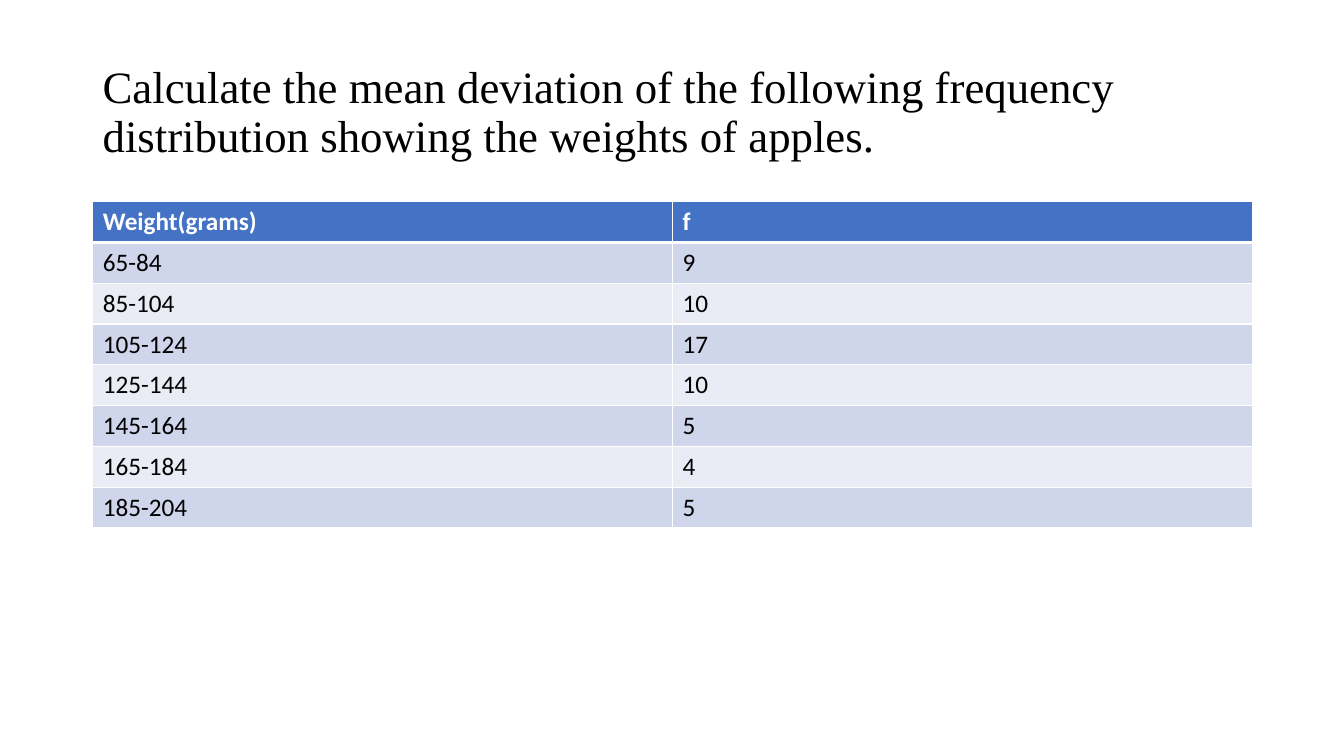
from dataclasses import dataclass

import pptx
import pptx.dml.color
import pptx.enum.text
import pptx.oxml.ns
import pptx.util
from lxml import etree

Inches = pptx.util.Inches
RGBColor = pptx.dml.color.RGBColor

BLACK = RGBColor(0x00, 0x00, 0x00)
WHITE = RGBColor(0xFF, 0xFF, 0xFF)
HEADER_BLUE = RGBColor(0x44, 0x72, 0xC4)
BAND_DARK = RGBColor(0xCF, 0xD5, 0xEA)
BAND_LIGHT = RGBColor(0xE9, 0xEB, 0xF5)

LEFT = Inches(0.92)
WIDTH = Inches(11.5)
TITLE = (
    "Calculate the mean deviation of the following frequency "
    "distribution showing the weights of apples."
)
HEADINGS = ("Weight(grams)", "f")
FIRST_WEIGHT = 65
CLASS_WIDTH = 20
FREQUENCIES = (9, 10, 17, 10, 5, 4, 5)


@dataclass(frozen=True)
class TextStyle:
    font: str
    size: int
    color: RGBColor
    bold: bool = False


@dataclass(frozen=True)
class RowStyle:
    text: TextStyle
    fill: RGBColor
    top_border: int = 1
    bottom_border: int = 1


TITLE_STYLE = TextStyle("Times New Roman", 32, BLACK)
BODY_TEXT = TextStyle("Calibri", 18, BLACK)
HEADER_ROW = RowStyle(
    TextStyle("Calibri", 18, WHITE, True), HEADER_BLUE, bottom_border=3
)


def add_run(paragraph, text: str, style: TextStyle) -> None:
    run = paragraph.add_run()
    run.text = text
    run.font.name = style.font
    run.font.size = pptx.util.Pt(style.size)
    run.font.bold = style.bold
    run.font.color.rgb = style.color


def add_border(cell, side: str, points: int) -> None:
    qn = pptx.oxml.ns.qn
    properties = cell._tc.get_or_add_tcPr()
    line = etree.SubElement(
        properties, qn(f"a:ln{side}"), w=str(pptx.util.Pt(points))
    )
    fill = etree.SubElement(line, qn("a:solidFill"))
    etree.SubElement(fill, qn("a:srgbClr"), val=str(WHITE))


def fill_cell(cell, text: str, style: RowStyle) -> None:
    borders = {"L": 1, "R": 1, "T": style.top_border, "B": style.bottom_border}
    for side, points in borders.items():
        add_border(cell, side, points)
    cell.fill.solid()
    cell.fill.fore_color.rgb = style.fill
    add_run(cell.text_frame.paragraphs[0], text, style.text)


def row_style(index: int) -> RowStyle:
    if index == 0:
        return HEADER_ROW
    fill = BAND_DARK if index % 2 else BAND_LIGHT
    top_border = HEADER_ROW.bottom_border if index == 1 else 1
    return RowStyle(BODY_TEXT, fill, top_border)


def add_title(slide) -> None:
    title = slide.shapes.add_textbox(LEFT, Inches(0.4), WIDTH, Inches(1.45))
    frame = title.text_frame
    frame.word_wrap = True
    frame.vertical_anchor = pptx.enum.text.MSO_ANCHOR.MIDDLE
    paragraph = frame.paragraphs[0]
    paragraph.line_spacing = 0.9
    add_run(paragraph, TITLE, TITLE_STYLE)


def add_frequency_table(slide) -> None:
    rows = [HEADINGS]
    for index, frequency in enumerate(FREQUENCIES):
        lower = FIRST_WEIGHT + index * CLASS_WIDTH
        rows.append((f"{lower}-{lower + CLASS_WIDTH - 1}", str(frequency)))
    table = slide.shapes.add_table(
        len(rows), len(HEADINGS), LEFT, Inches(2), WIDTH, Inches(3.24)
    ).table
    for row_index, row in enumerate(rows):
        for column_index, text in enumerate(row):
            fill_cell(table.cell(row_index, column_index), text, row_style(row_index))


def main() -> None:
    presentation = pptx.Presentation()
    presentation.slide_width = Inches(13.33)
    presentation.slide_height = Inches(7.5)
    slide = presentation.slides.add_slide(presentation.slide_layouts[6])
    add_title(slide)
    add_frequency_table(slide)
    presentation.save("out.pptx")


if __name__ == "__main__":
    main()
